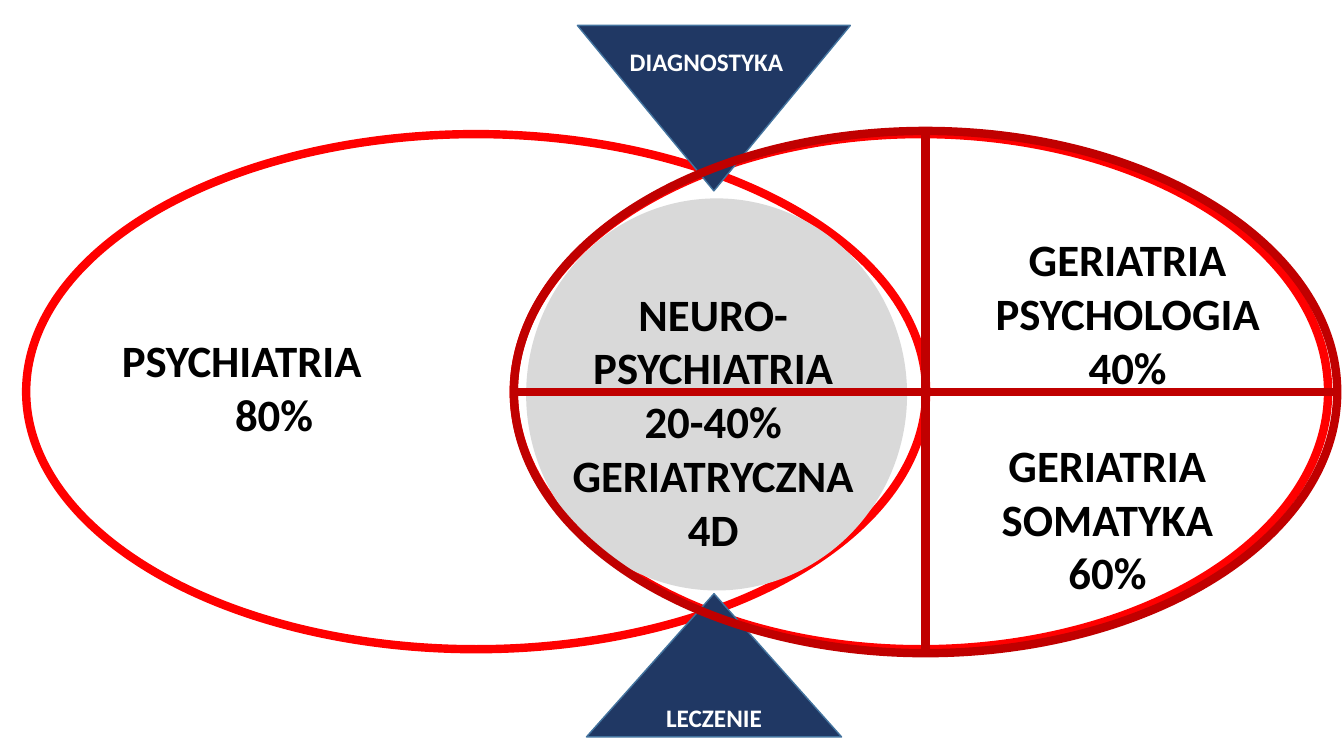
from pptx import Presentation
from pptx.dml.color import RGBColor
from pptx.enum.shapes import MSO_SHAPE
from pptx.enum.text import MSO_ANCHOR, PP_ALIGN
from pptx.util import Cm, Pt

ELLIPSE = MSO_SHAPE.OVAL
TRIANGLE = MSO_SHAPE.ISOSCELES_TRIANGLE
CROSSED_ELLIPSE = MSO_SHAPE.FLOWCHART_OR
LEFT, CENTER = PP_ALIGN.LEFT, PP_ALIGN.CENTER
BOTTOM = MSO_ANCHOR.BOTTOM

COLORS = {
    "black": "000000",
    "white": "FFFFFF",
    "red": "FF0000",
    "dark_red": "C00000",
    "navy": "203864",
    "steel": "43739E",
    "gray": "D9D9D9",
}
TOPIC = {"name": "Calibri", "size": Pt(32), "bold": True}
LABEL = {"name": "Calibri", "size": Pt(18), "bold": True}
BOTTOM_LABEL_FRAME = {
    "vertical_anchor": BOTTOM,
    "margin_left": 0,
    "margin_right": 0,
    "margin_top": 0,
    "margin_bottom": Cm(0.1),
}


def color(name):
    return RGBColor.from_string(COLORS[name])


def set_values(target, values):
    for name, value in values.items():
        setattr(target, name, value)


def add_figure(page, kind, place, fill=None, line=None, width=6):
    figure = page.shapes.add_shape(kind, *map(Cm, place))
    figure.shadow.inherit = False
    if fill:
        figure.fill.solid()
        figure.fill.fore_color.rgb = color(fill)
    else:
        figure.fill.background()
    if line:
        figure.line.color.rgb = color(line)
        figure.line.width = Pt(width)
    else:
        figure.line.fill.background()
    return figure


def write_lines(frame, lines, font, font_color):
    frame.word_wrap = True
    for index, (text, alignment) in enumerate(lines):
        para = frame.paragraphs[0] if index == 0 else frame.add_paragraph()
        para.alignment = alignment
        span = para.add_run()
        span.text = text
        set_values(span.font, font)
        span.font.color.rgb = color(font_color)


def add_text(page, place, lines, font=TOPIC, font_color="black"):
    box = page.shapes.add_textbox(*map(Cm, place))
    write_lines(box.text_frame, lines, font, font_color)


def centered(*texts):
    return [(text, CENTER) for text in texts]


def main():
    deck = Presentation()
    deck.slide_width, deck.slide_height = Cm(33.87), Cm(19.05)
    page = deck.slides.add_slide(deck.slide_layouts[6])

    add_figure(page, ELLIPSE, (12.95, 3.38, 20.52, 12.98), line="red")
    add_figure(page, ELLIPSE, (0.66, 3.38, 22.68, 12.98), line="red")
    add_text(page, (2.82, 8.26, 8.18, 3), [("PSYCHIATRIA", LEFT), ("80%", CENTER)])
    add_text(page, (23.85, 5.72, 9.14, 4.37),
             centered("GERIATRIA", "PSYCHOLOGIA", "40%"))

    diagnosis = add_figure(page, TRIANGLE, (14.55, 0.64, 6.88, 4.17), "navy", "steel", 1)
    diagnosis.rotation = 180
    treatment = add_figure(page, TRIANGLE, (14.78, 14.96, 6.43, 3.61), "navy", "steel", 1)
    set_values(treatment.text_frame, BOTTOM_LABEL_FRAME)
    write_lines(treatment.text_frame, centered("LECZENIE"), LABEL, "white")

    add_figure(page, ELLIPSE, (13.26, 5, 9.6, 9.88), fill="gray")
    add_text(page, (15.62, 1.04, 4.52, 1.02), [("DIAGNOSTYKA", LEFT)], LABEL, "white")
    add_text(page, (13.82, 7.09, 8.31, 7.09),
             centered("NEURO-PSYCHIATRIA", "20-40%", "GERIATRYCZNA", "4D"))
    add_figure(page, CROSSED_ELLIPSE, (12.95, 3.3, 20.75, 13.16), line="dark_red")
    add_text(page, (23.34, 10.9, 9.14, 4.37), centered("GERIATRIA SOMATYKA", "60%"))

    deck.save("out.pptx")


if __name__ == "__main__":
    main()
